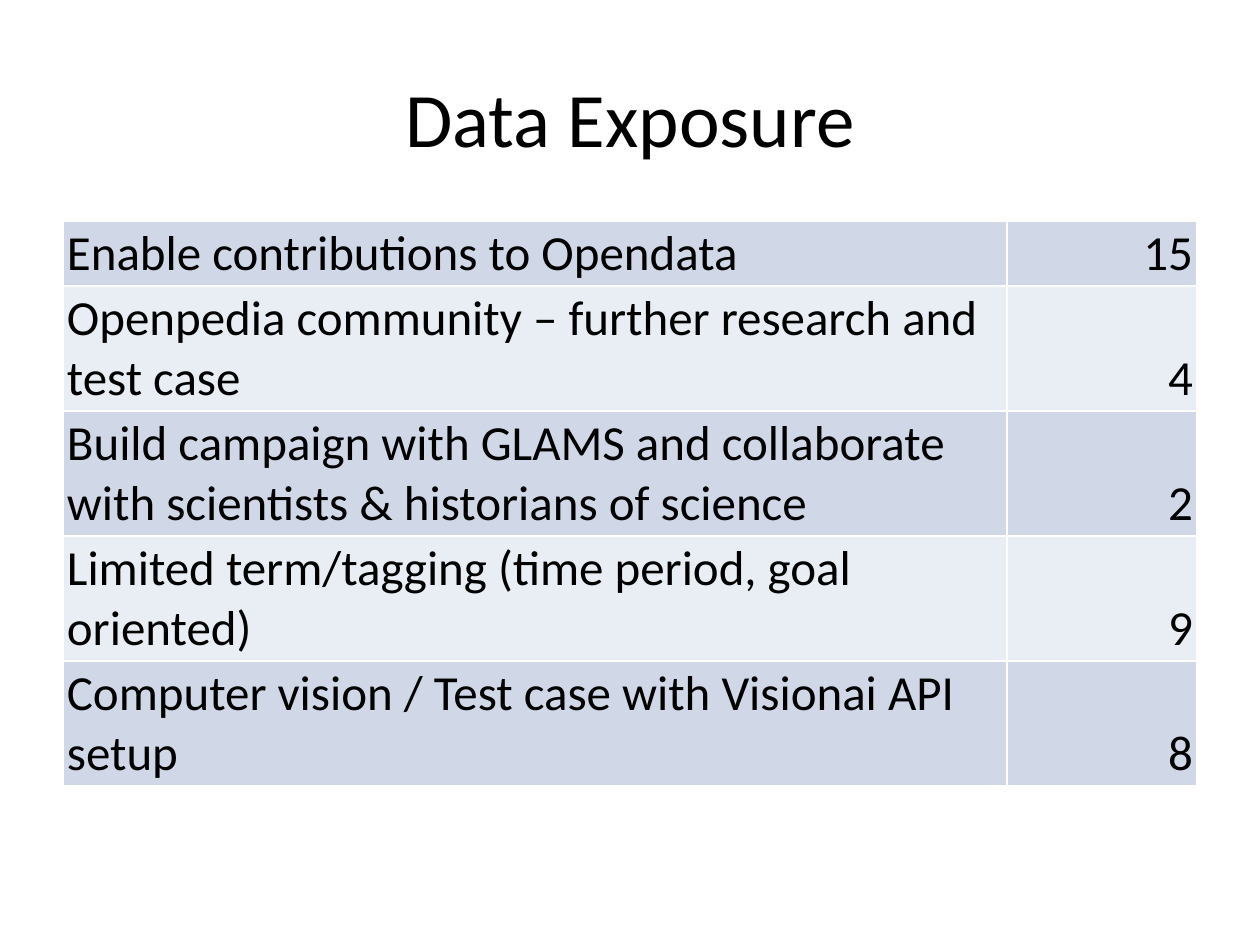
from lxml import etree
from pptx import Presentation, util as u
from pptx.dml.color import RGBColor
from pptx.enum import text
from pptx.oxml import ns

PX = 914400 / 126
FONT = "Calibri"
COLORS = {"ink": "000000", "odd": "D0D8E8", "even": "E9EDF4", "rule": "FFFFFF"}
TASKS = [
    ("Enable contributions to Opendata", 15, 65),
    ("Openpedia community – further research and test case", 4, 125),
    ("Build campaign with GLAMS and collaborate with scientists & historians of science", 2, 125),
    ("Limited term/tagging (time period, goal oriented)", 9, 125),
    ("Computer vision / Test case with Visionai API setup", 8, 125),
]


def px(length):
    return u.Emu(round(length * PX))


def color(name):
    return RGBColor.from_string(COLORS[name])


def write(frame, words, size, align):
    line = frame.paragraphs[0]
    line.alignment = align
    run = line.add_run()
    run.text = words
    run.font.name = FONT
    run.font.size = u.Pt(size)
    run.font.color.rgb = color("ink")


def add_heading(slide, words):
    heading = slide.shapes.add_textbox(px(63), px(38), px(1134), px(157))
    heading.text_frame.word_wrap = True
    heading.text_frame.vertical_anchor = text.MSO_ANCHOR.MIDDLE
    write(heading.text_frame, words, 44, text.PP_ALIGN.CENTER)


def add_borders(cell):
    properties = cell._tc.get_or_add_tcPr()
    for position, side in enumerate(("lnL", "lnR", "lnT", "lnB")):
        border = etree.Element(ns.qn(f"a:{side}"), w=str(u.Pt(1)))
        fill = etree.SubElement(border, ns.qn("a:solidFill"))
        etree.SubElement(fill, ns.qn("a:srgbClr"), val=COLORS["rule"])
        properties.insert(position, border)


def fill_cell(cell, words, band, align):
    cell.margin_left = cell.margin_right = px(4)
    cell.margin_top = cell.margin_bottom = px(2)
    cell.vertical_anchor = text.MSO_ANCHOR.BOTTOM
    cell.fill.solid()
    cell.fill.fore_color.rgb = color(band)
    add_borders(cell)
    write(cell.text_frame, words, 28, align)


def add_votes(slide, tasks):
    total = sum(height for _, _, height in tasks)
    votes = slide.shapes.add_table(len(tasks), 2, px(63), px(221), px(1134), px(total)).table
    votes.first_row = False
    for column, width in zip(votes.columns, (944, 190)):
        column.width = px(width)
    for index, (task, count, height) in enumerate(tasks):
        votes.rows[index].height = px(height)
        band = "even" if index % 2 else "odd"
        fill_cell(votes.cell(index, 0), task, band, text.PP_ALIGN.LEFT)
        fill_cell(votes.cell(index, 1), str(count), band, text.PP_ALIGN.RIGHT)


def main():
    deck = Presentation()
    deck.slide_width, deck.slide_height = px(1260), px(945)
    slide = deck.slides.add_slide(deck.slide_layouts[6])
    add_heading(slide, "Data Exposure")
    add_votes(slide, TASKS)
    deck.save("out.pptx")


if __name__ == "__main__":
    main()
